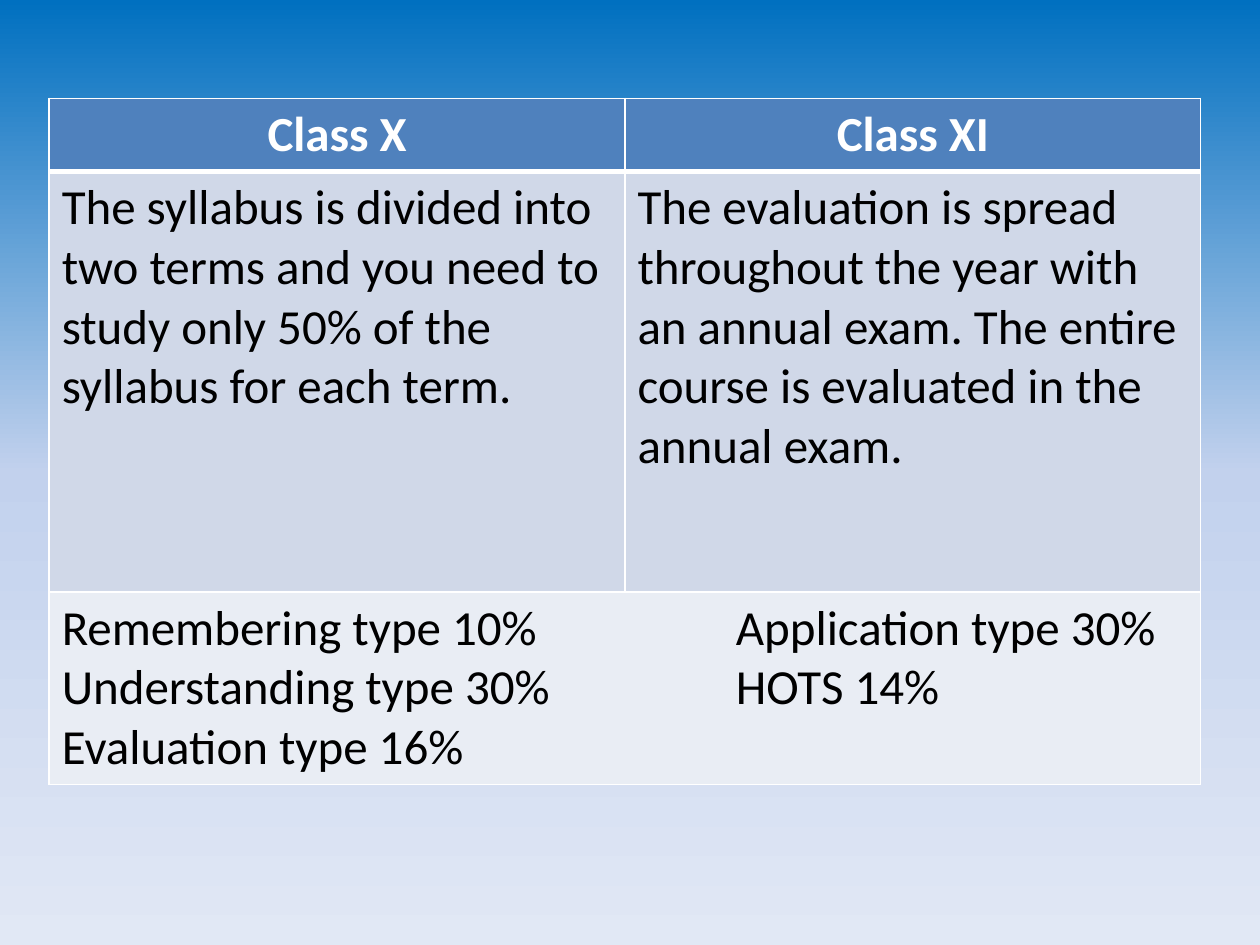
import copy
from dataclasses import dataclass

import pptx
import pptx.dml.color
import pptx.enum.text
import pptx.oxml
import pptx.oxml.ns
import pptx.util

A_NS = pptx.oxml.ns.nsdecls("a")
CENTER = pptx.enum.text.PP_ALIGN.CENTER


@dataclass(frozen=True)
class Theme:
    font: str = "Calibri"
    size: int = 28
    header_fill: str = "4F81BD"
    band_fill: str = "D0D8E8"
    light_fill: str = "E9EDF4"
    header_text: str = "FFFFFF"
    body_text: str = "000000"
    border: str = "FFFFFF"
    thin: float = 1
    thick: float = 3
    sky: tuple = ((0, "0070C0"), (0.5, "C2D1ED"), (1, "E1E8F5"))


@dataclass(frozen=True)
class TableRow:
    height: float
    fill: str
    cells: tuple[str, ...]
    header: bool = False


THEME = Theme()
SLIDE_W, SLIDE_H = 10, 7.5
LEFT, TOP, COL_W = 0.39, 0.78, 4.57
TAB_STOP = 5.35  # second column of question types, from the text edge

ROWS = (
    TableRow(0.58, THEME.header_fill, ("Class X", "Class XI"), header=True),
    TableRow(3.34, THEME.band_fill, (
        "The syllabus is divided into two terms and you need to study "
        "only 50% of the syllabus for each term.",
        "The evaluation is spread throughout the year with an annual exam. "
        "The entire course is evaluated in the annual exam.")),
    TableRow(1.5, THEME.light_fill, (
        "Remembering type 10%\tApplication type 30%\n"
        "Understanding type 30%\tHOTS 14%\n"
        "Evaluation type 16%",)),
)


def rgb(value: str) -> pptx.dml.color.RGBColor:
    return pptx.dml.color.RGBColor.from_string(value)


def paint_background(slide) -> None:
    """Vertical gradient with the theme's three stops."""
    fill = slide.background.fill
    fill.gradient()
    fill.gradient_angle = 270
    stop_list = next(slide.element.iter(pptx.oxml.ns.qn("a:gsLst")))
    stop_list.append(copy.deepcopy(stop_list[-1]))
    for stop, (position, color) in zip(fill.gradient_stops, THEME.sky):
        stop.position = position
        stop.color.rgb = rgb(color)


def set_borders(cell, top: float, bottom: float) -> None:
    widths = {"L": THEME.thin, "R": THEME.thin, "T": top, "B": bottom}
    tc_pr = cell._tc.get_or_add_tcPr()
    for i, (side, width) in enumerate(widths.items()):
        tc_pr.insert(i, pptx.oxml.parse_xml(
            f'<a:ln{side} {A_NS} w="{pptx.util.Pt(width)}"><a:solidFill>'
            f'<a:srgbClr val="{THEME.border}"/></a:solidFill></a:ln{side}>'))


def set_tab(p, inches: float) -> None:
    p._p.get_or_add_pPr().append(pptx.oxml.parse_xml(
        f'<a:tabLst {A_NS}><a:tab pos="{pptx.util.Inches(inches)}" algn="l"/>'
        '</a:tabLst>'))


def write_cell(cell, text: str, header: bool) -> None:
    tf = cell.text_frame
    for i, line in enumerate(text.split("\n")):
        p = tf.add_paragraph() if i else tf.paragraphs[0]
        if header:
            p.alignment = CENTER
        if "\t" in line:
            set_tab(p, TAB_STOP)
        r = p.add_run()
        r.text = line
        r.font.name = THEME.font
        r.font.size = pptx.util.Pt(THEME.size)
        r.font.bold = header
        r.font.color.rgb = rgb(THEME.header_text if header else THEME.body_text)


def add_comparison(slide, rows: tuple[TableRow, ...], columns: int) -> None:
    table = slide.shapes.add_table(
        len(rows), columns, *map(pptx.util.Inches, (
            LEFT, TOP, columns * COL_W, sum(row.height for row in rows)))).table
    for i, row in enumerate(rows):
        table.rows[i].height = pptx.util.Inches(row.height)
        # A row with a single text spans the whole table
        if len(row.cells) == 1:
            table.cell(i, 0).merge(table.cell(i, columns - 1))
        below_header = i > 0 and rows[i - 1].header
        for j in range(columns):
            cell = table.cell(i, j)
            cell.fill.solid()
            cell.fill.fore_color.rgb = rgb(row.fill)
            set_borders(cell, THEME.thick if below_header else THEME.thin,
                        THEME.thick if row.header else THEME.thin)
        for j, text in enumerate(row.cells):
            write_cell(table.cell(i, j), text, row.header)


def main() -> None:
    prs = pptx.Presentation()
    prs.slide_width = pptx.util.Inches(SLIDE_W)
    prs.slide_height = pptx.util.Inches(SLIDE_H)
    slide = prs.slides.add_slide(prs.slide_layouts[6])  # blank: no title
    paint_background(slide)
    add_comparison(slide, ROWS, columns=2)
    prs.save("out.pptx")


if __name__ == "__main__":
    main()
